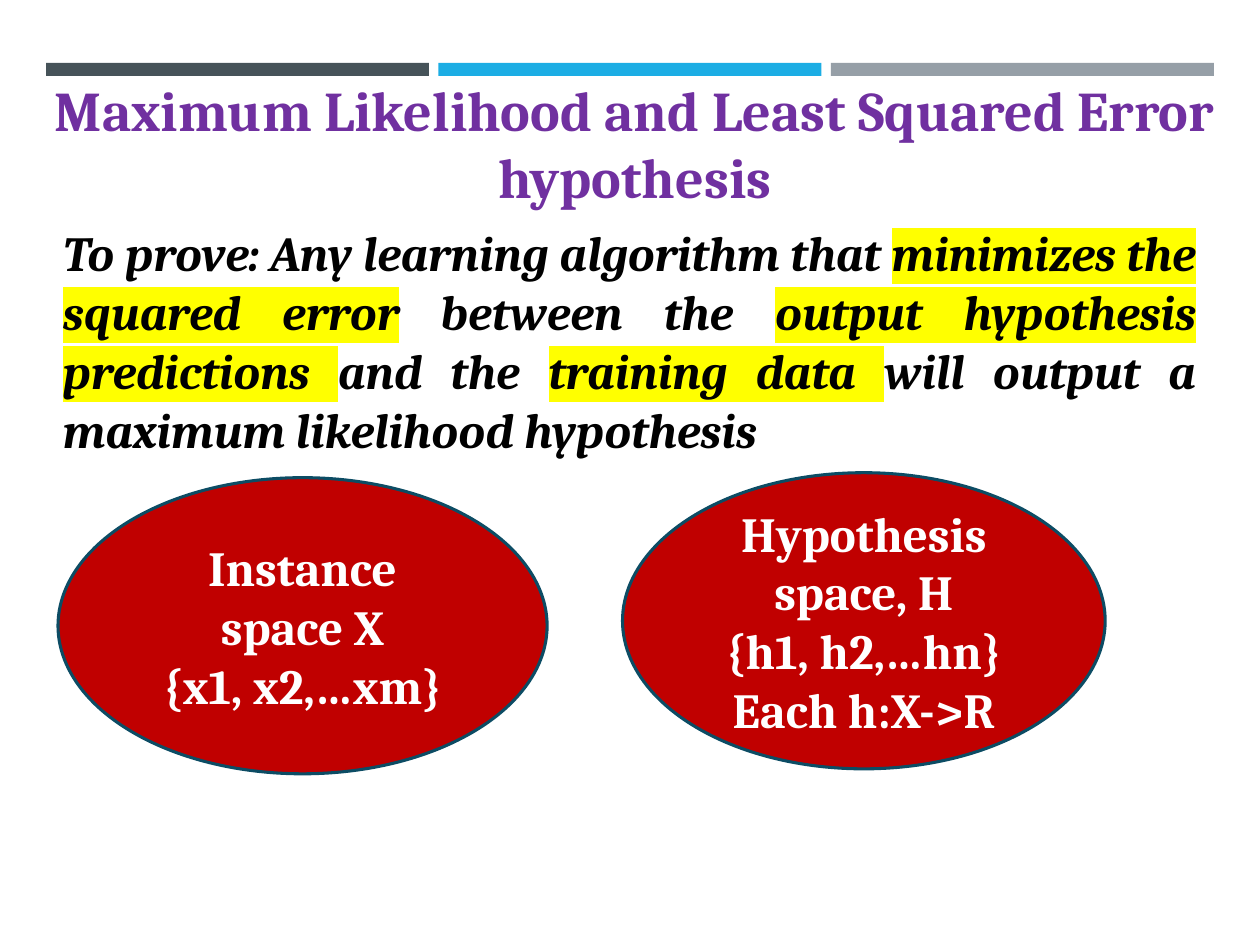
"""Build the slide on maximum likelihood and least squared error."""
from lxml import etree
from pptx import Presentation
from pptx.dml import color
from pptx.enum import shapes, text
from pptx.oxml import ns
from pptx.util import Cm, Pt


def rgb(value):
    return color.RGBColor.from_string(value)


class SlideBuilder:
    font_name = "Cambria"
    highlight = "FFFF00"
    outline = "0C4C64"

    def __init__(self, slide):
        self.slide = slide

    def format_frame(self, frame, anchor):
        settings = {"word_wrap": True, "auto_size": text.MSO_AUTO_SIZE.NONE,
                    "vertical_anchor": anchor}
        for name, value in settings.items():
            setattr(frame, name, value)

    def fill_paragraph(self, paragraph, parts, size, ink, align, italic=False):
        paragraph.alignment = align
        settings = {"name": self.font_name, "size": Pt(size), "bold": True, "italic": italic}
        for wording, marked in parts:
            run = paragraph.add_run()
            run.text = wording
            run.font.color.rgb = rgb(ink)
            for name, value in settings.items():
                setattr(run.font, name, value)
            if marked:
                mark = etree.Element(ns.qn("a:highlight"))
                etree.SubElement(mark, ns.qn("a:srgbClr"), val=self.highlight)
                run._r.get_or_add_rPr().find(ns.qn("a:latin")).addprevious(mark)

    def shape(self, kind, box, fill):
        item = self.slide.shapes.add_shape(kind, *map(Cm, box))
        item.shadow.inherit = False
        item.fill.solid()
        item.fill.fore_color.rgb = rgb(fill)
        return item

    def bar(self, box, fill):
        self.shape(shapes.MSO_SHAPE.RECTANGLE, box, fill).line.fill.background()

    def title(self, box, wording):
        heading = self.slide.shapes.title
        for name, value in zip(("left", "top", "width", "height"), box):
            setattr(heading, name, Cm(value))
        self.format_frame(heading.text_frame, text.MSO_ANCHOR.TOP)
        self.fill_paragraph(heading.text_frame.paragraphs[0], [(wording, False)], 32,
                            "7030A0", text.PP_ALIGN.CENTER)

    def statement(self, box, parts):
        frame = self.slide.shapes.add_textbox(*map(Cm, box)).text_frame
        self.format_frame(frame, text.MSO_ANCHOR.TOP)
        self.fill_paragraph(frame.paragraphs[0], parts, 28, "000000",
                            text.PP_ALIGN.JUSTIFY, True)

    def space(self, box, lines):
        oval = self.shape(shapes.MSO_SHAPE.OVAL, box, "C00000")
        oval.line.color.rgb = rgb(self.outline)
        oval.line.width = Pt(1.75)
        frame = oval.text_frame
        self.format_frame(frame, text.MSO_ANCHOR.MIDDLE)
        for index, line in enumerate(lines):
            paragraph = frame.add_paragraph() if index else frame.paragraphs[0]
            self.fill_paragraph(paragraph, [(line, False)], 28, "FFFFFF",
                                text.PP_ALIGN.CENTER)


def main():
    deck = Presentation()
    deck.slide_width, deck.slide_height = Cm(25.4), Cm(19.05)
    builder = SlideBuilder(deck.slides.add_slide(deck.slide_layouts[5]))

    bar_left, bar_pitch = 0.93, 7.91
    for index, fill in enumerate(("465359", "1CADE4", "969FA7")):
        builder.bar((bar_left + index * bar_pitch, 1.27, 7.72, 0.26), fill)

    builder.title((0.81, 1.4, 23.98, 3),
                  "Maximum Likelihood and Least Squared Error hypothesis")
    builder.statement((1.02, 4.37, 23.34, 5.05), [
        ("To prove: Any learning algorithm that ", False),
        ("minimizes the squared error", True),
        (" between the ", False),
        ("output hypothesis predictions ", True),
        ("and the ", False),
        ("training data ", True),
        ("will output a maximum likelihood hypothesis ", False),
    ])
    builder.space((1.17, 9.63, 9.86, 5.97), ["Instance space X", "{x1, x2,…xm}"])
    builder.space((12.55, 9.53, 9.73, 5.97),
                  ["Hypothesis space, H", "{h1, h2,…hn}", "Each h:X->R"])
    deck.save("out.pptx")


if __name__ == "__main__":
    main()
